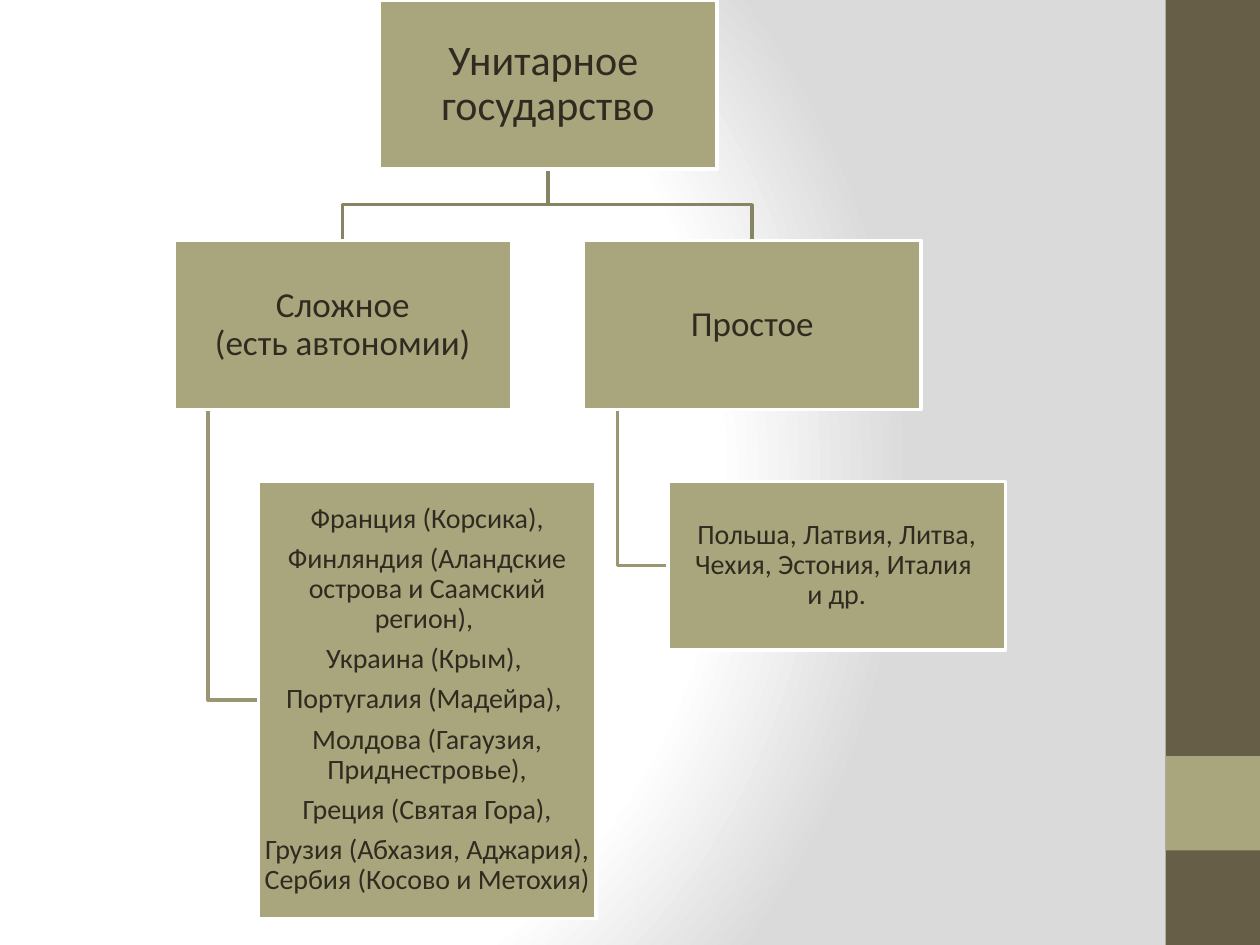
"""Builds a slide with a tree of the kinds of unitary state."""
from lxml import etree
from pptx import Presentation
from pptx import util as u
from pptx.dml.color import RGBColor
from pptx.enum import shapes, text
from pptx.oxml import ns

W, H = 2.68, 1.34
DROP, INDENT = 0.27, 0.67
ROOT, LEVEL2, LEVEL3 = 0, 1.91, 3.82
ROOT_X, COMPLEX_X, SIMPLE_X = 3.01, 1.38, 4.63
LIST_H = 3.47


def rgb(value):
    return RGBColor.from_string(value)


class Deck:
    FONT, INK, BOX, BAR, EDGE = "Calibri", "2F2B20", "A9A57C", "675E47", "FFFFFF"

    def __init__(self, s):
        self.s = s

    def background(self, stops, center):
        self.s.background.fill.gradient()
        grad = self.s.element.find(".//" + ns.qn("a:gradFill"))
        for child in list(grad):
            grad.remove(child)
        gs_list = etree.SubElement(grad, ns.qn("a:gsLst"))
        for pos, color in stops:
            gs = etree.SubElement(gs_list, ns.qn("a:gs"), pos=str(pos * 1000))
            etree.SubElement(gs, ns.qn("a:srgbClr"), val=color)
        circle = etree.SubElement(grad, ns.qn("a:path"), {"path": "circle"})
        sides = {side: str(v * 1000) for side, v in zip("ltrb", center)}
        etree.SubElement(circle, ns.qn("a:fillToRect"), sides)

    def rect(self, x, y, w, h, fill, line=None):
        sp = self.s.shapes.add_shape(shapes.MSO_SHAPE.RECTANGLE, *map(u.Inches, (x, y, w, h)))
        sp.shadow.inherit = False
        sp.fill.solid()
        sp.fill.fore_color.rgb = rgb(fill)
        if line:
            sp.line.color.rgb = rgb(line)
            sp.line.width = u.Pt(2)
        else:
            sp.line.fill.background()
        return sp

    def box(self, x, y, paragraphs, size, h=H, inset=0.01):
        tf = self.rect(x, y, W, h, self.BOX, self.EDGE).text_frame
        tf.word_wrap = True
        tf.vertical_anchor = text.MSO_ANCHOR.MIDDLE
        tf.margin_left = tf.margin_right = tf.margin_top = tf.margin_bottom = u.Inches(inset)
        for i, paragraph in enumerate(paragraphs):
            p = tf.add_paragraph() if i else tf.paragraphs[0]
            p.alignment = text.PP_ALIGN.CENTER
            p.line_spacing = 0.9
            p.space_after = u.Pt(size * 0.35)
            for j, line in enumerate(paragraph.split("\n")):
                if j:
                    p.add_line_break()
                r = p.add_run()
                r.text = line
                r.font.name, r.font.size = self.FONT, u.Pt(size)
                r.font.color.rgb = rgb(self.INK)

    def branch(self, points, color):
        start, *rest = [(u.Inches(x), u.Inches(y)) for x, y in points]
        builder = self.s.shapes.build_freeform(*start)
        builder.add_line_segments(rest, close=False)
        sp = builder.convert_to_shape()
        sp.shadow.inherit = False
        sp.fill.background()
        sp.line.color.rgb = rgb(color)
        sp.line.width = u.Pt(2)


def main():
    prs = Presentation()
    prs.slide_width, prs.slide_height = u.Inches(10), u.Inches(7.5)
    deck = Deck(prs.slides.add_slide(prs.slide_layouts[6]))
    deck.background([(0, "FFFFFF"), (75, "FFFFFF"), (100, "DADADA")], (20, 50, 100, 50))
    deck.rect(9.25, 0, 0.75, 7.5, deck.BAR)
    deck.rect(9.25, 6, 0.75, 0.75, deck.BOX)

    mid, bottom = ROOT_X + W / 2, ROOT + H
    turn = (bottom + LEVEL2) / 2
    for x, h in ((SIMPLE_X, H), (COMPLEX_X, LIST_H)):
        stem, leaf_y = x + DROP, LEVEL3 + h / 2
        deck.branch([(stem, LEVEL2 + H), (stem, leaf_y), (x + INDENT, leaf_y)], "999671")
        top = x + W / 2
        deck.branch([(mid, bottom), (mid, turn), (top, turn), (top, LEVEL2)], "878463")

    deck.box(ROOT_X, ROOT, ["Унитарное \nгосударство"], 24, inset=0.02)
    deck.box(COMPLEX_X, LEVEL2, ["Сложное\n(есть автономии)"], 20)
    deck.box(COMPLEX_X + INDENT, LEVEL3, [
        "Франция (Корсика),",
        "Финляндия (Аландские острова и Саамский регион), ",
        "Украина (Крым), ",
        "Португалия (Мадейра), ",
        "Молдова (Гагаузия, Приднестровье),",
        "Греция (Святая Гора),",
        "Грузия (Абхазия, Аджария), Сербия (Косово и Метохия)",
    ], 16, h=LIST_H)
    deck.box(SIMPLE_X, LEVEL2, ["Простое"], 20)
    deck.box(SIMPLE_X + INDENT, LEVEL3,
             ["Польша, Латвия, Литва, Чехия, Эстония, Италия \nи др."], 16)
    prs.save("out.pptx")


if __name__ == "__main__":
    main()
